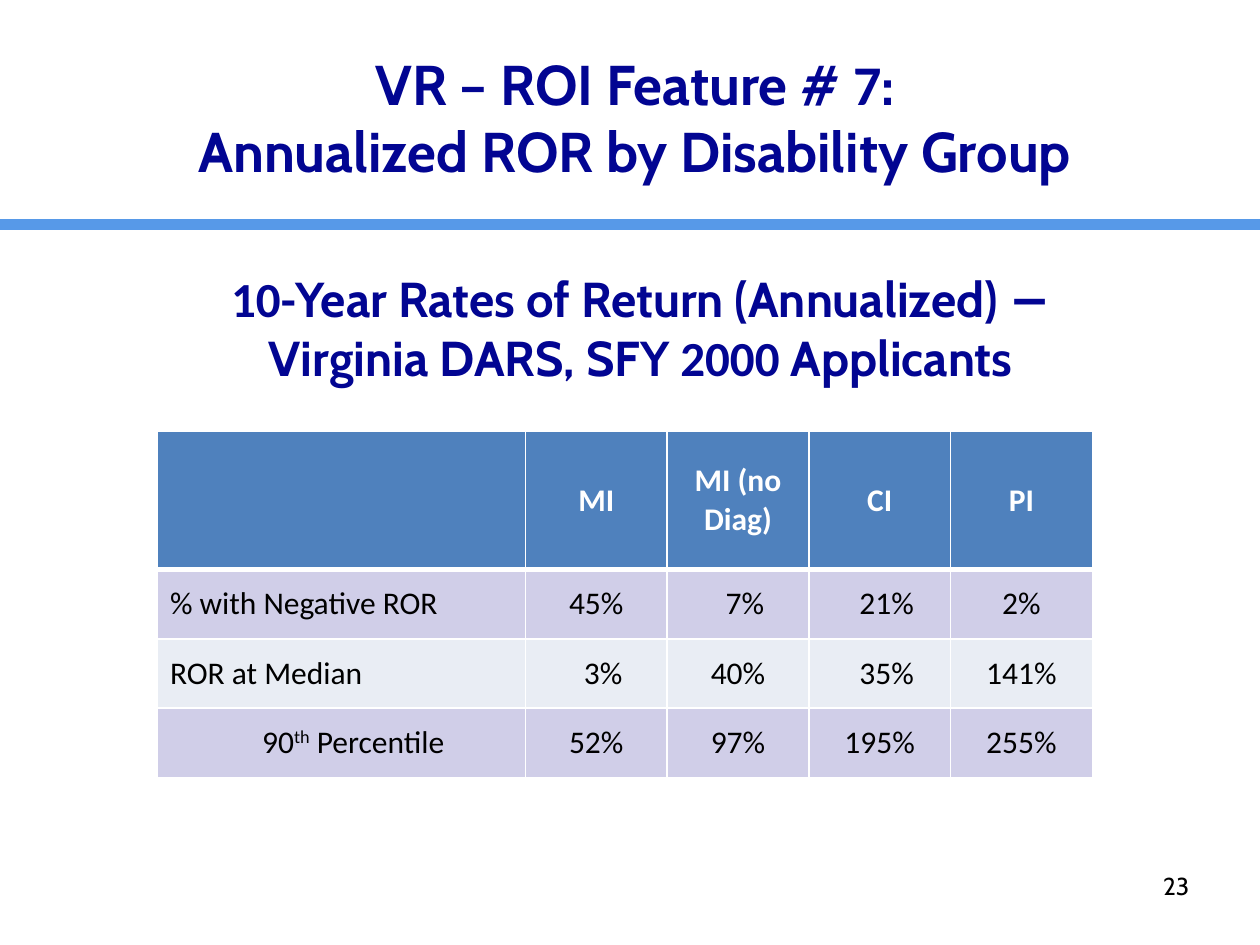
from dataclasses import dataclass

from lxml.etree import SubElement
from pptx import Presentation
from pptx.dml.color import RGBColor
from pptx.enum.shapes import MSO_CONNECTOR
from pptx.enum.text import MSO_ANCHOR, PP_ALIGN
from pptx.oxml import parse_xml
from pptx.oxml.ns import nsdecls, qn
from pptx.util import Inches, Pt


@dataclass(frozen=True)
class Theme:
    heading_font: str = "Cabin"
    body_font: str = "Calibri"
    navy: str = "020592"
    rule: str = "5799E8"
    header: str = "4F81BD"
    band_odd: str = "D0CEE8"
    band_even: str = "E9EDF4"
    white: str = "FFFFFF"
    black: str = "000000"
    title_size: int = 32
    subtitle_size: int = 28
    table_size: int = 18
    number_size: int = 14


THEME = Theme()

# A figure marked with "+" sits slightly right of the cell's centre.
HEADERS = ["", "MI", "MI (no Diag)", "CI", "PI"]
RATES = [
    ["% with Negative ROR", "45%", "+7%", "+21%", "2%"],
    ["ROR at Median", "+3%", "40%", "+35%", "141%"],
    ["90th Percentile", "52%", "97%", "195%", "255%"],
]
NUDGE = Inches(0.11)
PERCENTILE_INDENT = Inches(0.73)


def style(paragraph, size, color, bold=False, align=PP_ALIGN.CENTER, name=None):
    paragraph.alignment = align
    font = paragraph.font
    font.size, font.bold = Pt(size), bold
    font.color.rgb = RGBColor.from_string(color)
    if name:
        font.name = name


def add_runs(paragraph, *pieces):
    """Add (text, font name) pieces as runs."""
    for text, name in pieces:
        run = paragraph.add_run()
        run.text = text
        run.font.name = name


def place(shape, box):
    shape.left, shape.top, shape.width, shape.height = map(Inches, box)


def add_title(slide, box):
    title = slide.shapes.title
    place(title, box)
    frame = title.text_frame
    frame.word_wrap = True
    frame.vertical_anchor = MSO_ANCHOR.MIDDLE
    paragraph = frame.paragraphs[0]
    style(paragraph, THEME.title_size, THEME.navy, bold=True)
    add_runs(paragraph, ("VR – ROI Feature # ", THEME.heading_font),
             ("7", THEME.body_font), (":", THEME.heading_font))
    paragraph.add_line_break()
    add_runs(paragraph, ("Annualized ROR by Disability Group", THEME.heading_font))


def add_rule(slide, y, color, weight):
    rule = slide.shapes.add_connector(
        MSO_CONNECTOR.STRAIGHT, 0, Inches(y), Inches(10), Inches(y))
    rule.line.color.rgb = RGBColor.from_string(color)
    rule.line.width = Pt(weight)
    SubElement(rule._element.spPr, qn("a:effectLst"))


def add_subtitle(slide, box):
    frame = slide.shapes.add_textbox(*map(Inches, box)).text_frame
    frame.word_wrap = True
    lines = [
        [("10-", THEME.body_font),
         ("Year Rates of Return (Annualized) −", THEME.heading_font)],
        [("Virginia DARS, SFY ", THEME.heading_font),
         ("2000 ", THEME.body_font), ("Applicants", THEME.heading_font)],
    ]
    for index, pieces in enumerate(lines):
        paragraph = frame.add_paragraph() if index else frame.paragraphs[0]
        style(paragraph, THEME.subtitle_size, THEME.navy, bold=True)
        add_runs(paragraph, *pieces)


def set_borders(cell, bottom):
    weights = {"lnL": 1, "lnR": 1, "lnT": 1, "lnB": bottom}
    properties = cell._tc.get_or_add_tcPr()
    for index, (side, weight) in enumerate(weights.items()):
        properties.insert(index, parse_xml(
            f'<a:{side} {nsdecls("a")} w="{Pt(weight)}"><a:solidFill>'
            f'<a:srgbClr val="{THEME.white}"/></a:solidFill></a:{side}>'))


def fill_cell(cell, text, fill, color, bold, align):
    cell.fill.solid()
    cell.fill.fore_color.rgb = RGBColor.from_string(fill)
    cell.vertical_anchor = MSO_ANCHOR.MIDDLE
    paragraph = cell.text_frame.paragraphs[0]
    properties = paragraph._p.get_or_add_pPr()
    if text.startswith("+"):
        properties.set("marL", str(NUDGE))
    if text.startswith("90th"):
        properties.set("marL", str(PERCENTILE_INDENT))
        for piece in ("90", "th", " Percentile"):
            run = paragraph.add_run()
            run.text = piece
            if piece == "th":
                run._r.get_or_add_rPr().set("baseline", "30000")
    elif text:
        paragraph.add_run().text = text.lstrip("+")
    style(paragraph, THEME.table_size, color, bold, align, THEME.body_font)


def add_rates_table(slide, box, label_width=2.92, header_height=1.1):
    rows = [HEADERS, *RATES]
    table = slide.shapes.add_table(
        len(rows), len(HEADERS), *map(Inches, box)).table
    figure_width = (box[2] - label_width) / (len(HEADERS) - 1)
    row_height = (box[3] - header_height) / len(RATES)
    for index, column in enumerate(table.columns):
        column.width = Inches(figure_width if index else label_width)
    for r, texts in enumerate(rows):
        is_header = r == 0
        table.rows[r].height = Inches(header_height if is_header else row_height)
        band = THEME.band_odd if r % 2 else THEME.band_even
        for c, text in enumerate(texts):
            cell = table.cell(r, c)
            fill_cell(cell, text,
                      fill=THEME.header if is_header else band,
                      color=THEME.white if is_header else THEME.black,
                      bold=is_header,
                      align=PP_ALIGN.CENTER if c else PP_ALIGN.LEFT)
            set_borders(cell, bottom=3 if is_header else 1)
            if r == 1:
                cell._tc.tcPr.find(qn("a:lnT")).set("w", str(Pt(3)))


def add_slide_number(slide, box):
    frame = slide.shapes.add_textbox(*map(Inches, box)).text_frame
    frame.word_wrap = True
    frame.vertical_anchor = MSO_ANCHOR.MIDDLE
    paragraph = frame.paragraphs[0]
    paragraph.add_run().text = "23"
    style(paragraph, THEME.number_size, THEME.black, name=THEME.heading_font)


def main():
    deck = Presentation()
    deck.slide_width, deck.slide_height = Inches(10), Inches(7.5)
    slide = deck.slides.add_slide(deck.slide_layouts[5])
    add_rule(slide, 1.78, THEME.rule, 7)
    add_rule(slide, 1.73, THEME.white, 0.5)
    add_title(slide, (0.25, 0.3, 9.58, 1.25))
    add_slide_number(slide, (9, 6.83, 0.67, 0.4))
    add_rates_table(slide, (1.25, 3.42, 7.42, 2.75))
    add_subtitle(slide, (1.5, 2.08, 7.17, 1.04))
    deck.save("out.pptx")


if __name__ == "__main__":
    main()
